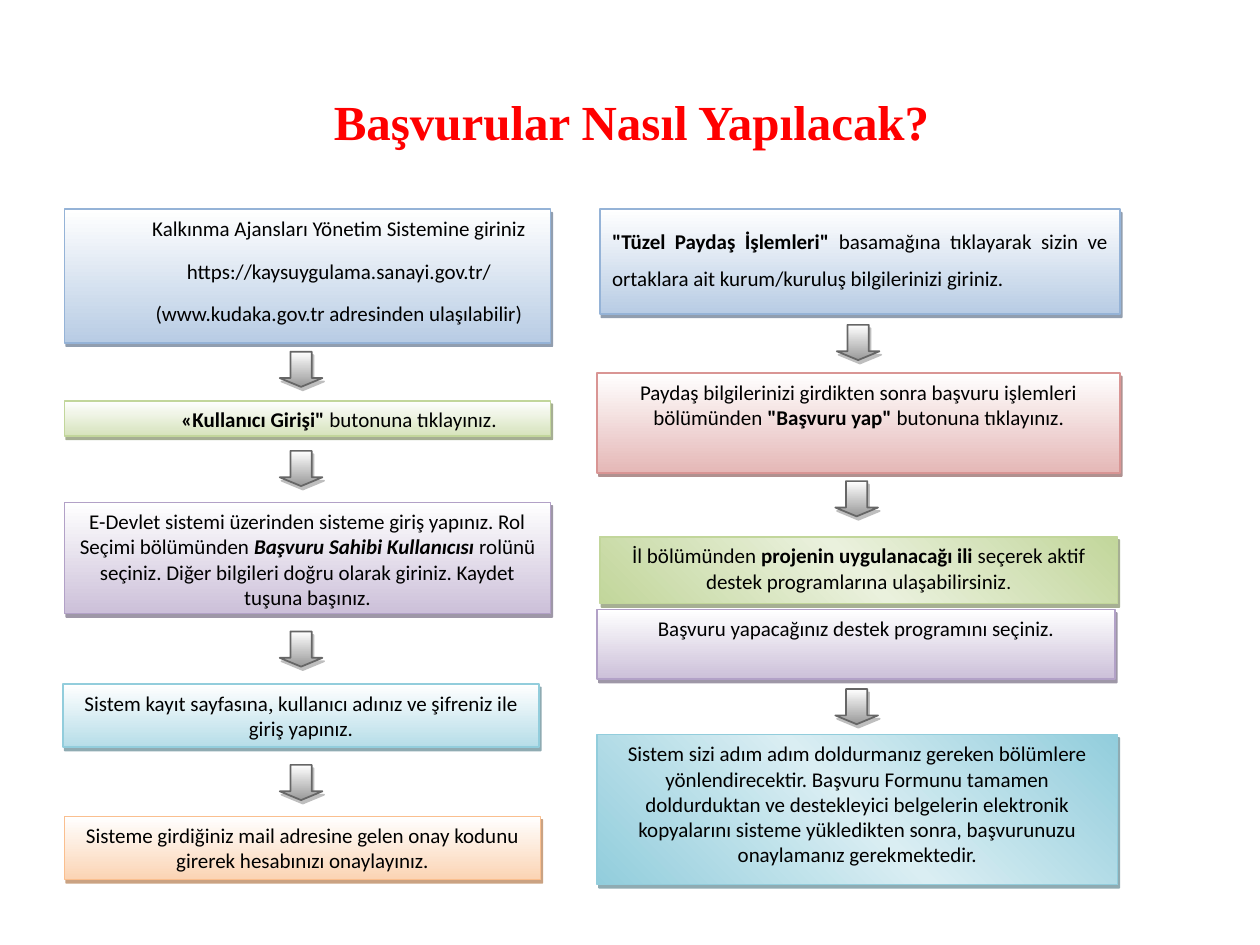
from lxml import etree
from pptx import Presentation
from pptx import util as u
from pptx.dml.color import RGBColor
from pptx.enum import shapes, text
from pptx.oxml import ns

HUES = {
    "blue": ("FFFFFF B8CCE4", "95B3D7", "243F60"),
    "green": ("FFFFFF D6E3BC", "C2D69B", "4E6128"),
    "purple": ("FFFFFF CCC0D9", "B2A1C7", "3F3151"),
    "aqua": ("FFFFFF B6DDE8", "92CDDC", "205867"),
    "orange": ("FFFFFF FBD4B4", "FABF8F", "974706"),
    "red": ("FFFFFF E5B8B7", "D99594", "622423"),
    "lime": ("C2D69B EAF1DD C2D69B", "C2D69B", "4E6128"),
    "teal": ("92CDDC DAEEF3 92CDDC", "92CDDC", "205867"),
    "gray": ("FFFFFF 999999", "666666", "7F7F7F"),
    "title": "FF0000",
    "text": "000000",
}


def add_block(kind, box, hue):
    fill, edge, shade = HUES[hue]
    stops = fill.split()
    block = slide.shapes.add_shape(kind, *[u.Cm(n) for n in box])
    props = block.element.spPr
    grad = etree.SubElement(props, ns.qn("a:gradFill"), rotWithShape="1")
    group = etree.SubElement(grad, ns.qn("a:gsLst"))
    for i, tone in enumerate(stops):
        stop = etree.SubElement(group, ns.qn("a:gs"), pos=str(i * 100000 // (len(stops) - 1)))
        etree.SubElement(stop, ns.qn("a:srgbClr"), val=tone)
    angle = 90 if len(stops) == 2 else 315
    etree.SubElement(grad, ns.qn("a:lin"), ang=str(angle * 60000), scaled="0")
    block.line.color.rgb = RGBColor.from_string(edge)
    block.line.width = u.Pt(1)
    block.shadow.inherit = False
    cast = etree.SubElement(props.find(ns.qn("a:effectLst")), ns.qn("a:outerShdw"),
                            dist=str(u.Pt(2.2)), dir=str(63 * 60000), algn="ctr", rotWithShape="0")
    tone = etree.SubElement(cast, ns.qn("a:srgbClr"), val=shade)
    etree.SubElement(tone, ns.qn("a:alpha"), val="50000")
    return block


def add_run(para, words, size, face, hue, bold=False, slant=False):
    run = para.add_run()
    run.text = words
    font = run.font
    font.size, font.name = u.Pt(size), face
    font.bold, font.italic = bold, slant
    font.color.rgb = RGBColor.from_string(HUES[hue])


deck = Presentation()
deck.slide_width, deck.slide_height = u.Cm(25.4), u.Cm(19.05)
slide = deck.slides.add_slide(deck.slide_layouts[6])

title = slide.shapes.add_textbox(u.Cm(1.3), u.Cm(1.73), u.Cm(22.86), u.Cm(1.4)).text_frame
title.word_wrap = True
title.vertical_anchor = text.MSO_ANCHOR.MIDDLE
title.paragraphs[0].alignment = text.PP_ALIGN.CENTER
add_run(title.paragraphs[0], "Başvurular Nasıl Yapılacak?", 28, "Times New Roman", "title", True)

steps = [
    ((1.3, 4.22, 9.8, 2.69), "blue", "indent", [
        [("Kalkınma Ajansları Yönetim Sistemine giriniz", "")],
        [("https://kaysuygulama.sanayi.gov.tr/", "")],
        [("(www.kudaka.gov.tr adresinden ulaşılabilir)", "")]]),
    ((1.3, 8.08, 9.8, 0.71), "green", "indent", [
        [("«Kullanıcı Girişi\"", "b"), (" butonuna tıklayınız.", "")]]),
    ((1.3, 10.13, 9.8, 2.24), "purple", "center", [
        [("E-Devlet sistemi üzerinden sisteme giriş yapınız. Rol Seçimi bölümünden ", ""),
         ("Başvuru Sahibi Kullanıcısı ", "bi"),
         ("rolünü seçiniz. Diğer bilgileri doğru olarak giriniz. Kaydet tuşuna başınız.", "")]]),
    ((1.27, 13.79, 9.6, 1.27), "aqua", "center", [
        [("Sistem kayıt sayfasına", ""), (",", "serif"),
         (" kullanıcı adınız ve şifreniz ile giriş yapınız.", "")]]),
    ((1.3, 16.46, 9.6, 1.27), "orange", "center", [
        [("Sisteme girdiğiniz mail adresine gelen onay kodunu girerek hesabınızı onaylayınız.", "")]]),
    ((12.09, 4.22, 10.49, 2.11), "blue", "justify", [
        [("\"Tüzel Paydaş İşlemleri\"", "b"),
         (" basamağına tıklayarak sizin ve ortaklara ait kurum/kuruluş bilgilerinizi giriniz.", "")]]),
    ((12.04, 7.52, 10.54, 2.01), "red", "center", [
        [("Paydaş bilgilerinizi girdikten sonra başvuru işlemleri bölümünden", ""),
         (" \"Başvuru yap\" ", "b"), ("butonuna tıklayınız.", "")]]),
    ((12.09, 10.82, 10.44, 1.35), "lime", "center", [
        [("İl bölümünden", ""), (" projenin uygulanacağı ili ", "b"),
         ("seçerek aktif destek programlarına ulaşabilirsiniz", ""), (".", "small")]]),
    ((12.04, 12.29, 10.44, 1.4), "purple", "center", [
        [("Başvuru yapacağınız destek programını seçiniz.", "")]]),
    ((12.04, 14.81, 10.49, 3.02), "teal", "center", [
        [("Sistem sizi adım adım doldurmanız gereken bölümlere yönlendirecektir. Başvuru Formunu "
          "tamamen doldurduktan ve destekleyici belgelerin elektronik kopyalarını sisteme "
          "yükledikten sonra, başvurunuzu onaylamanız gerekmektedir.", "")]]),
]
for box, hue, form, paras in steps:
    frame = add_block(shapes.MSO_SHAPE.RECTANGLE, box, hue).text_frame
    frame.word_wrap = True
    frame.vertical_anchor = text.MSO_ANCHOR.TOP
    for i, runs in enumerate(paras):
        para = frame.add_paragraph() if i else frame.paragraphs[0]
        para.alignment = text.PP_ALIGN.CENTER
        para.space_after = u.Pt(10)
        if form == "indent":
            para.level = 1
            props = para._p.get_or_add_pPr()
            props.set("marL", str(u.Cm(1.27)))
            props.set("indent", "0")
        elif form == "justify":
            para.alignment = text.PP_ALIGN.JUSTIFY
            para.line_spacing = 1.5
        for words, style in runs:
            add_run(para, words, 11 if style == "small" else 12,
                    "Times New Roman" if style == "serif" else "Calibri",
                    "text", style in ("b", "bi"), style == "bi")

arrows = [(5.64, 7.09), (5.64, 9.09), (5.64, 12.73), (5.64, 15.42),
          (16.87, 6.55), (16.84, 9.7), (16.84, 13.89)]
for left, top in arrows:
    arrow = add_block(shapes.MSO_SHAPE.DOWN_ARROW, (left, top, 0.86, 0.71), "gray")
    arrow.adjustments[0] = 0.5
    arrow.adjustments[1] = 0.25

deck.save("out.pptx")
